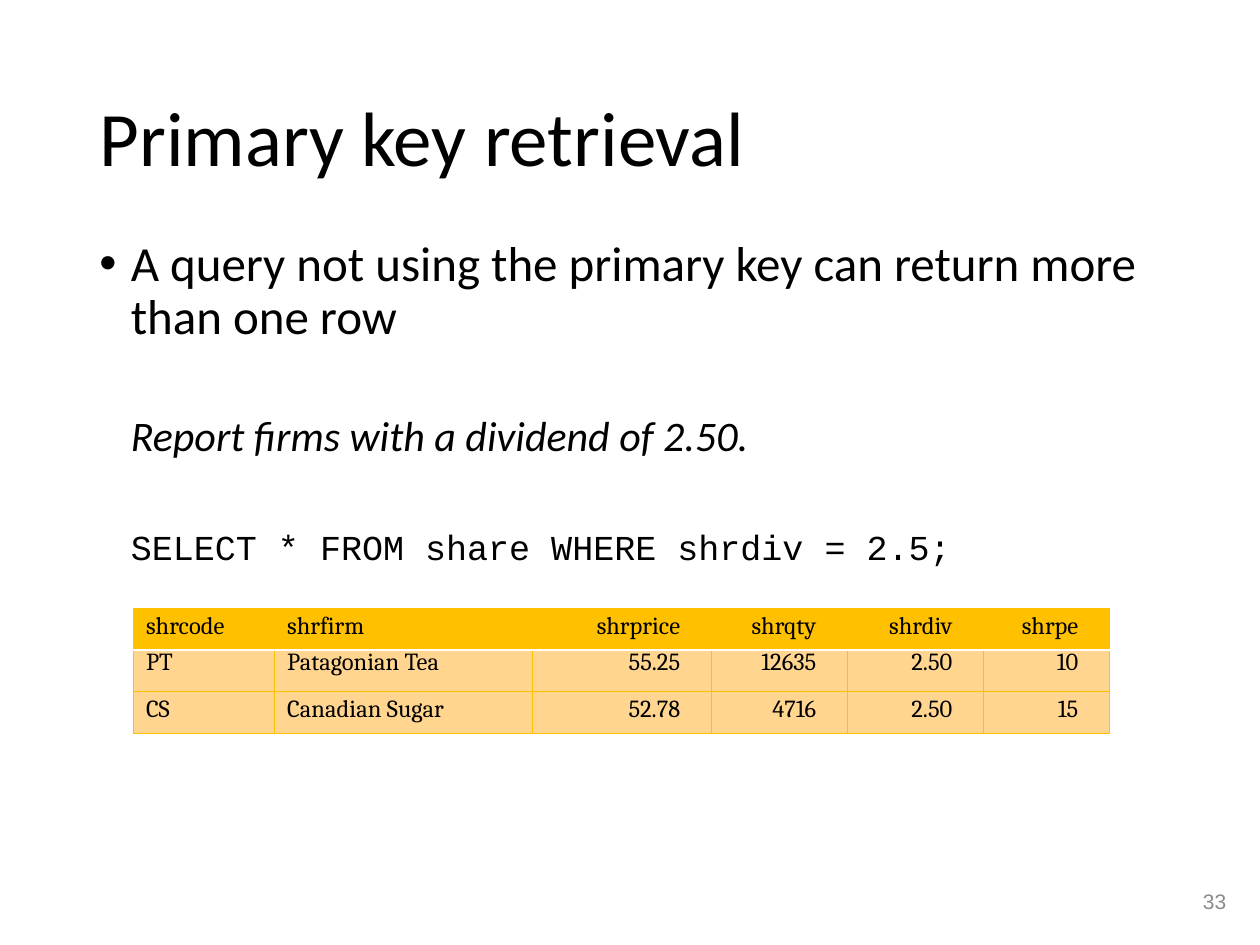
from dataclasses import dataclass

from lxml.etree import SubElement
from pptx import Presentation
from pptx.dml.color import RGBColor
from pptx.enum.text import MSO_ANCHOR, MSO_AUTO_SIZE, PP_ALIGN
from pptx.oxml.ns import qn
from pptx.util import Inches, Pt


@dataclass(frozen=True)
class Theme:
    ink: str = "000000"
    muted: str = "8C8C8C"
    header: str = "FFC000"
    band: str = "FFD590"
    rule: str = "FFFFFF"
    sans: str = "Calibri"
    serif: str = "Cambria"
    code: str = "Courier New"
    number: str = "Arial"
    title_size: int = 44
    bullet_size: int = 28
    request_size: int = 24
    code_size: int = 20
    table_size: int = 14
    number_size: int = 12


THEME = Theme()
INDENT = 0.25
COLUMN_WIDTHS = [1.12, 2.05, 1.42, 1.08, 1.08, 1]
ROW_HEIGHT = 0.33
TEXT_COLUMNS = 2
ROW_SPACING = [0.88, 0.64, 0.88]
SHARES = [
    ["shrcode", "shrfirm", "shrprice", "shrqty", "shrdiv", "shrpe"],
    ["PT", "Patagonian Tea", "55.25", "12635", "2.50", "10"],
    ["CS", "Canadian Sugar", "52.78", "4716", "2.50", "15"],
]


def style(paragraph, face, size, color=THEME.ink, spacing=0.9, before=0):
    paragraph.font.name = face
    paragraph.font.size = Pt(size)
    paragraph.font.color.rgb = RGBColor.from_string(color)
    paragraph.line_spacing = spacing
    paragraph.space_before = Pt(before)


def add_title(slide, text):
    title = slide.shapes.title
    title.left, title.top = Inches(0.69), Inches(0.4)
    title.width, title.height = Inches(8.62), Inches(1.45)
    frame = title.text_frame
    frame.text = text
    frame.auto_size = MSO_AUTO_SIZE.NONE
    frame.vertical_anchor = MSO_ANCHOR.MIDDLE
    heading = frame.paragraphs[0]
    heading.alignment = PP_ALIGN.LEFT
    style(heading, THEME.sans, THEME.title_size)


def add_text_frame(slide, left, top, width, height):
    box = slide.shapes.add_textbox(Inches(left), Inches(top), Inches(width), Inches(height))
    box.text_frame.word_wrap = True
    return box.text_frame


def indent(paragraph, bullet=None):
    properties = paragraph._p.get_or_add_pPr()
    properties.set("marL", str(Inches(INDENT)))
    properties.set("indent", str(-Inches(INDENT) if bullet else 0))
    if bullet:
        SubElement(properties, qn("a:buFont"), typeface=THEME.number)
        SubElement(properties, qn("a:buChar"), char=bullet)


def add_query(slide):
    frame = add_text_frame(slide, 0.69, 1.85, 8.5, 4.32)
    frame.text = "\n".join([
        "A query not using the primary key can return more than one row",
        "Report firms with a dividend of 2.50.",
        "SELECT * FROM share WHERE shrdiv = 2.5;",
    ])
    point, request, statement = frame.paragraphs
    style(point, THEME.sans, THEME.bullet_size, before=10)
    style(request, THEME.sans, THEME.request_size, before=40)
    style(statement, THEME.code, THEME.code_size, before=40)
    request.font.italic = True
    indent(point, "•")
    indent(request)
    indent(statement)


def add_border(cell, side, color, width):
    line = SubElement(cell._tc.get_or_add_tcPr(), qn(f"a:ln{side}"), w=str(Pt(width)))
    SubElement(SubElement(line, qn("a:solidFill")), qn("a:srgbClr"), val=color)


def format_cell(cell, row, column):
    ruled_side = {0: "B", 1: "T"}.get(row)
    for side in "LRTB":
        color, width = (THEME.rule, 1) if side == ruled_side else (THEME.header, 0.5)
        add_border(cell, side, color, width)
    cell.fill.solid()
    cell.fill.fore_color.rgb = RGBColor.from_string(THEME.band if row else THEME.header)
    entry = cell.text_frame.paragraphs[0]
    style(entry, THEME.serif, THEME.table_size, spacing=ROW_SPACING[row], before=2.8)
    entry.font.bold = False
    if column >= TEXT_COLUMNS:
        entry.alignment = PP_ALIGN.RIGHT
        cell.margin_right = Inches(0.25)


def add_shares(slide):
    shares = slide.shapes.add_table(
        len(SHARES), len(COLUMN_WIDTHS), Inches(1.06), Inches(4.83),
        Inches(sum(COLUMN_WIDTHS)), Inches(ROW_HEIGHT * len(SHARES)),
    ).table
    for column, width in zip(shares.columns, COLUMN_WIDTHS):
        column.width = Inches(width)
    for row, values in enumerate(SHARES):
        shares.rows[row].height = Inches(ROW_HEIGHT)
        for column, value in enumerate(values):
            cell = shares.cell(row, column)
            cell.text = value
            format_cell(cell, row, column)


def add_slide_number(slide, number):
    frame = add_text_frame(slide, 7.58, 6.95, 2.25, 0.4)
    frame.text = number
    frame.vertical_anchor = MSO_ANCHOR.MIDDLE
    label = frame.paragraphs[0]
    label.alignment = PP_ALIGN.RIGHT
    style(label, THEME.number, THEME.number_size, THEME.muted, spacing=1.0)


def main():
    deck = Presentation()
    deck.slide_width, deck.slide_height = Inches(10), Inches(7.5)
    slide = deck.slides.add_slide(deck.slide_layouts[5])
    add_title(slide, "Primary key retrieval")
    add_query(slide)
    add_slide_number(slide, "33")
    add_shares(slide)
    deck.save("out.pptx")


if __name__ == "__main__":
    main()
